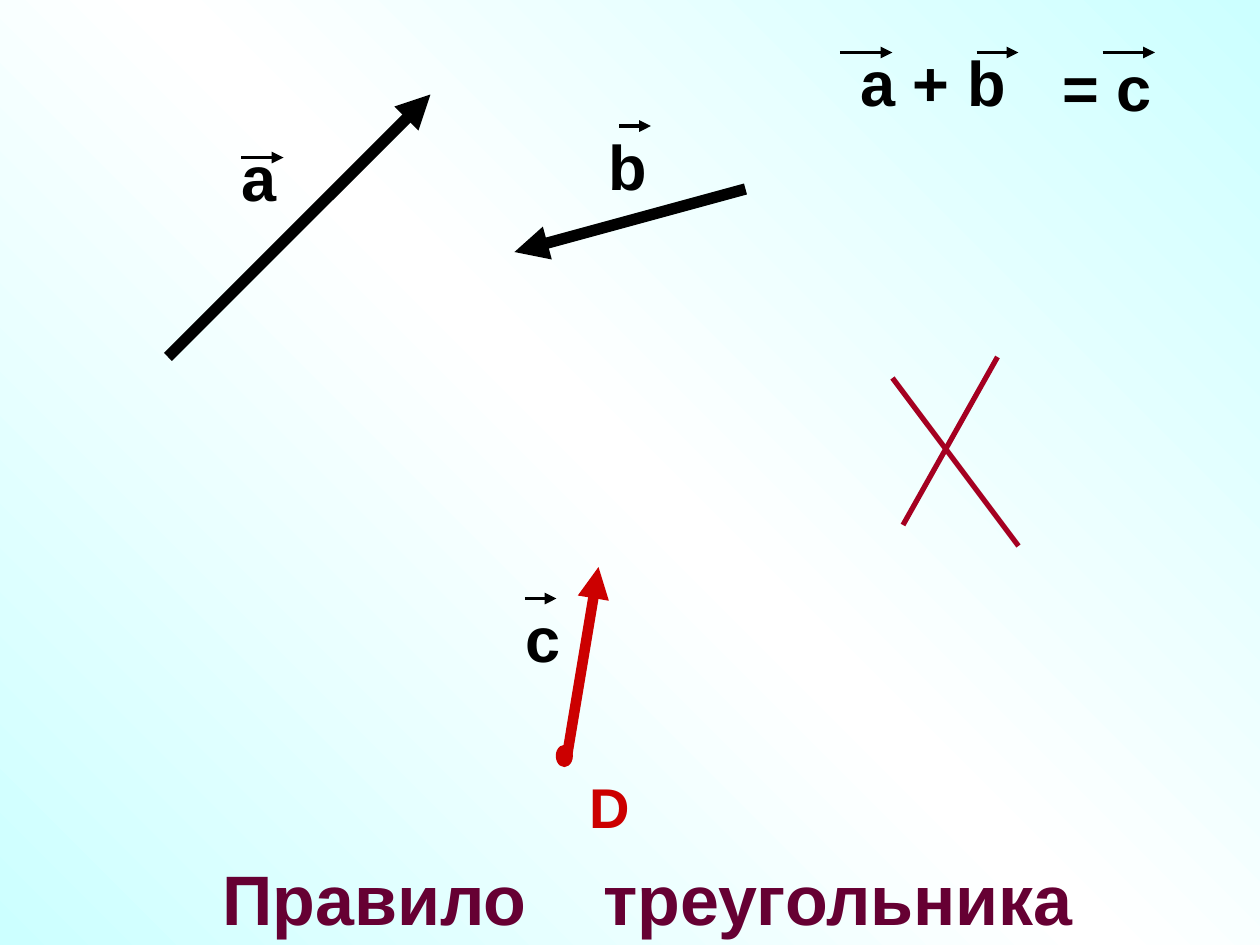
from copy import deepcopy
from dataclasses import dataclass

from lxml import etree
from pptx import Presentation
from pptx.dml.color import RGBColor
from pptx.enum import shapes, text
from pptx.oxml import ns
from pptx.util import Pt


@dataclass(frozen=True)
class Theme:
    font: str = "Arial"
    ink: str = "000000"
    red: str = "CC0000"
    cross: str = "A50021"
    title: str = "660033"
    background: tuple = ("CCFFFF", "FFFFFF", "CCFFFF")
    title_size: float = 40
    label_size: float = 36
    point_size: float = 32
    vector_width: float = 6.5
    result_width: float = 6
    cross_width: float = 3
    mark_width: float = 2.25


THEME = Theme()


def rgb(value):
    return RGBColor.from_string(value)


def set_background(slide):
    fill = slide.background.fill
    fill.gradient()
    fill.gradient_angle = 45
    stops = slide.element.find(".//" + ns.qn("a:gsLst"))
    stops.insert(1, deepcopy(stops[0]))
    for index, color in enumerate(THEME.background):
        stop = fill.gradient_stops[index]
        stop.position = index / 2
        stop.color.rgb = rgb(color)


def add_line(container, start, end, color, width, arrow=True):
    points = [Pt(value) for value in (*start, *end)]
    connector = container.add_connector(shapes.MSO_CONNECTOR.STRAIGHT, *points)
    connector.line.color.rgb = rgb(color)
    connector.line.width = Pt(width)
    if arrow:
        line = connector.line._get_or_add_ln()
        etree.SubElement(line, ns.qn("a:tailEnd"), type="triangle")
    etree.SubElement(connector._element.spPr, ns.qn("a:effectLst"))


def add_mark(container, left, top, length):
    add_line(container, (left, top), (left + length, top), THEME.ink, THEME.mark_width)


def add_text(container, box, words, size, color=THEME.ink, wrap=False):
    shape = container.add_textbox(*[Pt(value) for value in box])
    frame = shape.text_frame
    frame.word_wrap = wrap
    frame.auto_size = text.MSO_AUTO_SIZE.SHAPE_TO_FIT_TEXT
    paragraph = frame.paragraphs[0]
    for word in words:
        run = paragraph.add_run()
        run.text = word
        run.font.name = THEME.font
        run.font.size = Pt(size)
        run.font.bold = True
        run.font.color.rgb = rgb(color)
    return paragraph


def add_label(container, box, word, marks):
    add_text(container, box, [word], THEME.label_size)
    for mark in marks:
        add_mark(container, *mark)


def add_point(container):
    dot = container.add_shape(shapes.MSO_SHAPE.OVAL, Pt(318), Pt(426), Pt(9), Pt(12))
    dot.shadow.inherit = False
    dot.fill.solid()
    dot.fill.fore_color.rgb = rgb(THEME.red)
    dot.line.color.rgb = rgb(THEME.red)
    dot.line.width = Pt(0.75)
    add_text(container, (330, 438, 37.4, 45.4), ["D"], THEME.point_size, THEME.red)


def add_cross(container):
    for start, end in (((570, 204), (516, 300)), ((510, 216), (582, 312))):
        add_line(container, start, end, THEME.cross, THEME.cross_width, arrow=False)


def add_title(container):
    paragraph = add_text(container, (120, 485.3, 538.6, 55.4), ["Правило", "\t", "треугольника"],
                         THEME.title_size, THEME.title, wrap=True)
    tabs = etree.SubElement(paragraph._p.get_or_add_pPr(), ns.qn("a:tabLst"))
    etree.SubElement(tabs, ns.qn("a:tab"), pos=str(Pt(217.6)), algn="l")


def main():
    presentation = Presentation()
    presentation.slide_width = Pt(720)
    presentation.slide_height = Pt(540)
    slide = presentation.slides.add_slide(presentation.slide_layouts[6])
    set_background(slide)
    canvas = slide.shapes

    add_point(canvas.add_group_shape().shapes)
    add_line(canvas, (96, 204), (246, 54), THEME.ink, THEME.vector_width)
    add_line(canvas, (426, 108), (294, 144), THEME.ink, THEME.vector_width)
    add_line(canvas, (324, 432), (342, 324), THEME.red, THEME.result_width)
    add_title(canvas)
    add_cross(canvas.add_group_shape().shapes)

    add_label(canvas, (131, 75.6, 34.6, 50.4), "а", [(138, 90, 24)])
    add_label(canvas, (340.6, 69.1, 36.7, 50.4), "b", [(354, 72, 18)])
    grouped_labels = (
        ((293, 339.1, 34.6, 50.4), "c", [(300, 342, 18)]),
        ((484.6, 21.6, 97.2, 50.4), "a + b", [(480, 30, 30), (558, 30, 24)]),
        ((599.8, 24, 65.5, 50.4), "= c", [(630, 30, 30)]),
    )
    for box, word, marks in grouped_labels:
        add_label(canvas.add_group_shape().shapes, box, word, marks)

    presentation.save("out.pptx")


if __name__ == "__main__":
    main()
